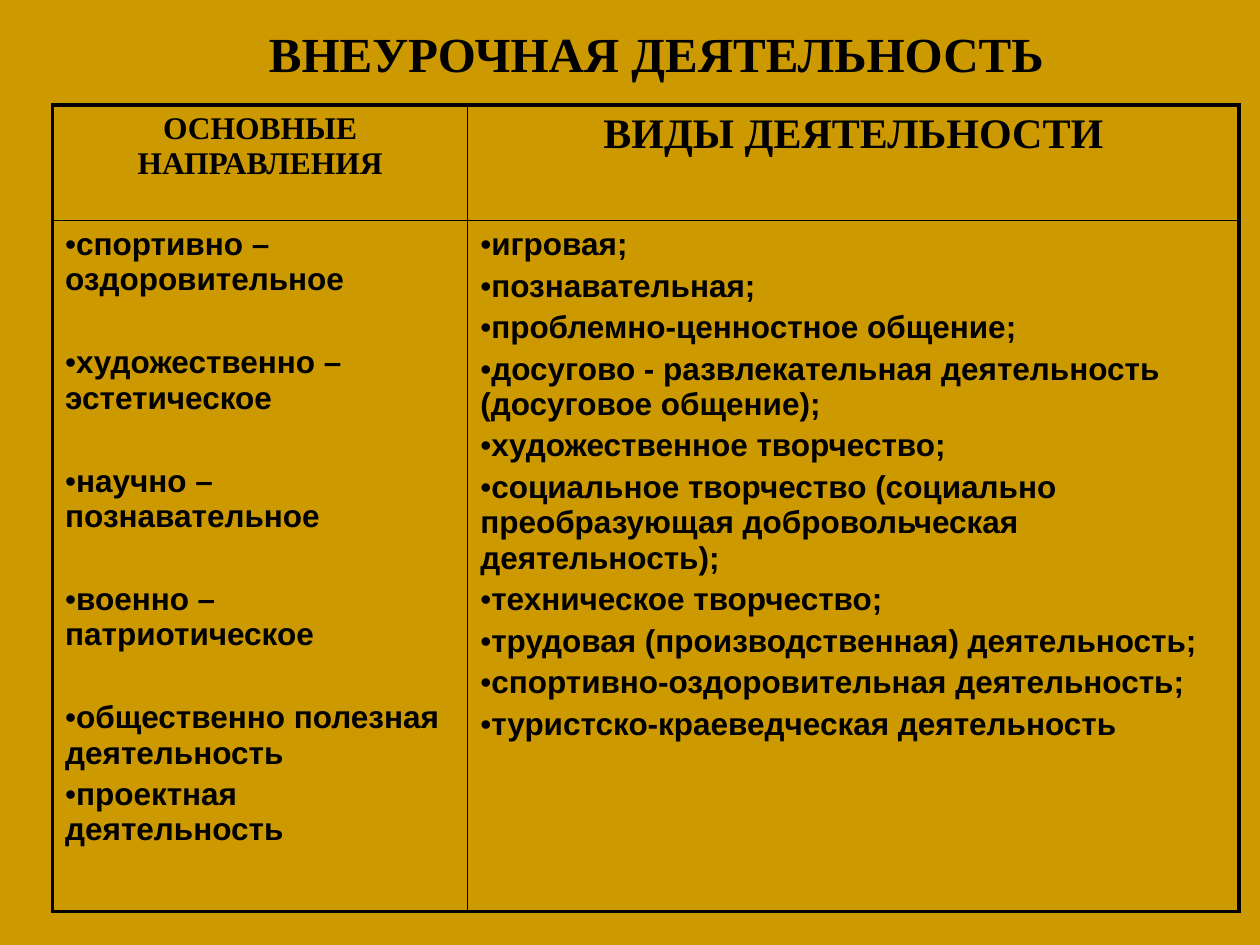
from dataclasses import dataclass

from lxml import etree
from pptx import Presentation
from pptx import util as u
from pptx.dml.color import RGBColor
from pptx.enum import text
from pptx.oxml import ns


@dataclass(frozen=True)
class Theme:
    background: RGBColor = RGBColor(0xCC, 0x99, 0x00)
    ink: RGBColor = RGBColor(0, 0, 0)
    heading_font: str = "Times New Roman"
    body_font: str = "Arial"
    title_size: int = 28
    header_sizes: tuple = (18, 24)
    body_size: int = 18
    outer_line: float = 2.25
    inner_line: float = 1
    tight_gap: float = 3.58
    wide_gap: float = 27.3


TITLE = "ВНЕУРОЧНАЯ ДЕЯТЕЛЬНОСТЬ"
HEADERS = ["ОСНОВНЫЕ НАПРАВЛЕНИЯ", "ВИДЫ ДЕЯТЕЛЬНОСТИ"]
DIRECTIONS = [
    "спортивно – оздоровительное",
    "художественно – эстетическое",
    "научно – познавательное",
    "военно – патриотическое",
    "общественно полезная деятельность",
    "проектная деятельность",
]
ACTIVITIES = [
    "игровая;",
    "познавательная;",
    "проблемно-ценностное общение;",
    "досугово - развлекательная деятельность (досуговое общение);",
    "художественное творчество;",
    "социальное творчество (социально преобразующая добровольческая деятельность);",
    "техническое творчество;",
    "трудовая (производственная) деятельность;",
    "спортивно-оздоровительная деятельность;",
    "туристско-краеведческая деятельность",
]


class SlideBuilder:
    def __init__(self, presentation, theme):
        self.theme = theme
        self.slide = presentation.slides.add_slide(presentation.slide_layouts[5])
        fill = self.slide.background.fill
        fill.solid()
        fill.fore_color.rgb = theme.background

    def format_runs(self, paragraph, font_name, size):
        for run in paragraph.runs:
            run.font.name = font_name
            run.font.size = u.Pt(size)
            run.font.bold = True
            run.font.color.rgb = self.theme.ink

    def heading(self, text_frame, wording, size):
        text_frame.text = wording
        paragraph = text_frame.paragraphs[0]
        paragraph.alignment = text.PP_ALIGN.CENTER
        self.format_runs(paragraph, self.theme.heading_font, size)

    def title(self, wording, left, top, width, height):
        shape = self.slide.shapes.title
        shape.left, shape.top = u.Cm(left), u.Cm(top)
        shape.width, shape.height = u.Cm(width), u.Cm(height)
        shape.text_frame.vertical_anchor = text.MSO_ANCHOR.MIDDLE
        self.heading(shape.text_frame, wording, self.theme.title_size)

    def bullets(self, text_frame, items, gaps):
        text_frame.text = "\n".join(items)
        for paragraph, gap in zip(text_frame.paragraphs, gaps):
            properties = paragraph._p.get_or_add_pPr()
            properties.set("marL", "0")
            properties.set("indent", "0")
            etree.SubElement(properties, ns.qn("a:buFont"), typeface=self.theme.body_font)
            etree.SubElement(properties, ns.qn("a:buChar"), char="•")
            paragraph.alignment = text.PP_ALIGN.LEFT
            if gap:
                paragraph.space_before = u.Pt(gap)
            self.format_runs(paragraph, self.theme.body_font, self.theme.body_size)

    def borders(self, cell, outer_sides):
        properties = cell._tc.get_or_add_tcPr()
        for position, side in enumerate("LRTB"):
            width = self.theme.outer_line if side in outer_sides else self.theme.inner_line
            line = etree.Element(ns.qn(f"a:ln{side}"), w=str(u.Pt(width)))
            fill = etree.SubElement(line, ns.qn("a:solidFill"))
            etree.SubElement(fill, ns.qn("a:srgbClr"), val=str(self.theme.ink))
            properties.insert(position, line)

    def table(self, left, top, widths, heights):
        frame = self.slide.shapes.add_table(
            len(heights), len(widths), u.Cm(left), u.Cm(top),
            u.Cm(sum(widths)), u.Cm(sum(heights)))
        table = frame.table
        table.first_row = table.horz_banding = False
        for column, width in zip(table.columns, widths):
            column.width = u.Cm(width)
        for row, height in zip(table.rows, heights):
            row.height = u.Cm(height)
        for row in range(len(heights)):
            for column in range(len(widths)):
                cell = table.cell(row, column)
                cell.fill.background()
                self.borders(cell, "TB"[row] + "LR"[column])
        return table


def main():
    presentation = Presentation()
    presentation.slide_width, presentation.slide_height = u.Cm(25.4), u.Cm(19.05)
    theme = Theme()
    builder = SlideBuilder(presentation, theme)
    builder.title(TITLE, 2.12, 0, 22.22, 2.12)

    table = builder.table(1.06, 2.12, [8.37, 15.55], [2.33, 13.93])
    for column, (wording, size) in enumerate(zip(HEADERS, theme.header_sizes)):
        builder.heading(table.cell(0, column).text_frame, wording, size)
    direction_gaps = [0] + [theme.wide_gap] * 4 + [theme.tight_gap]
    activity_gaps = [0] + [theme.tight_gap] * (len(ACTIVITIES) - 1)
    builder.bullets(table.cell(1, 0).text_frame, DIRECTIONS, direction_gaps)
    builder.bullets(table.cell(1, 1).text_frame, ACTIVITIES, activity_gaps)

    presentation.save("out.pptx")


if __name__ == "__main__":
    main()
